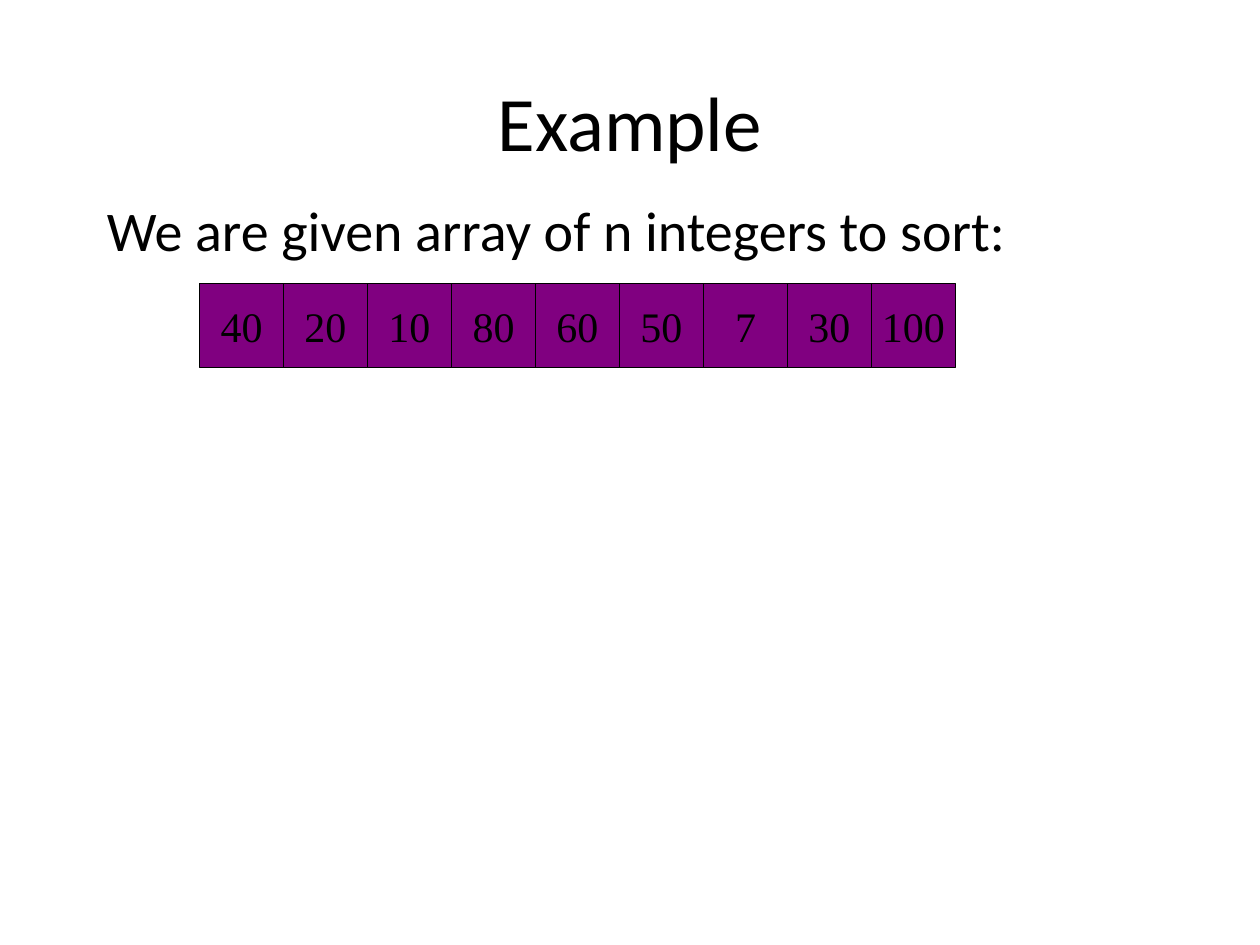
from pptx import Presentation
from pptx.dml.color import RGBColor
from pptx.enum.shapes import MSO_SHAPE
from pptx.enum.text import MSO_ANCHOR, PP_ALIGN
from pptx.util import Inches, Pt

RECT = MSO_SHAPE.RECTANGLE
TOP, MIDDLE = MSO_ANCHOR.TOP, MSO_ANCHOR.MIDDLE
LEFT, CENTER = PP_ALIGN.LEFT, PP_ALIGN.CENTER

WIDTH, HEIGHT = Inches(10), Inches(7.5)
CELL = WIDTH / 15  # side of one square array cell
ARRAY_LEFT, ARRAY_TOP = 2.375 * CELL, 3.375 * CELL
BLACK, PURPLE = "000000", "800080"
VALUES = [40, 20, 10, 80, 60, 50, 7, 30, 100]


def color(fmt, value):
    fmt.rgb = RGBColor.from_string(value)


def set_text(sp, text, size, font, align, anchor, wrap):
    tf = sp.text_frame
    tf.text = text
    tf.word_wrap = wrap
    tf.vertical_anchor = anchor
    p = tf.paragraphs[0]
    p.alignment = align
    r = p.runs[0]
    r.font.size = Pt(size)
    r.font.name = font
    color(r.font.color, BLACK)


def add_text(s, text, top, height, size, align, anchor):
    """Text box across the content width; top and height are shares of the slide."""
    sp = s.shapes.add_textbox(int(0.075 * WIDTH), int(top * HEIGHT),
                              int(0.85 * WIDTH), int(height * HEIGHT))
    set_text(sp, text, size, "Calibri", align, anchor, True)


def add_cell(s, col, value):
    sp = s.shapes.add_shape(RECT, int(ARRAY_LEFT + col * CELL), int(ARRAY_TOP),
                            int(CELL), int(CELL))
    sp.shadow.inherit = False
    sp.fill.solid()
    color(sp.fill.fore_color, PURPLE)
    color(sp.line.color, BLACK)
    sp.line.width = Pt(0.75)
    set_text(sp, str(value), 24, "Times New Roman", CENTER, MIDDLE, False)


def main():
    prs = Presentation()
    prs.slide_width, prs.slide_height = WIDTH, HEIGHT
    s = prs.slides.add_slide(prs.slide_layouts[6])

    # Title and introduction
    add_text(s, "Example", 0.044, 0.167, 44, CENTER, MIDDLE)
    add_text(s, "We are given array of n integers to sort:", 0.2, 0.6, 32, LEFT, TOP)

    # Array to sort
    for col, value in enumerate(VALUES):
        add_cell(s, col, value)

    prs.save("out.pptx")


if __name__ == "__main__":
    main()
